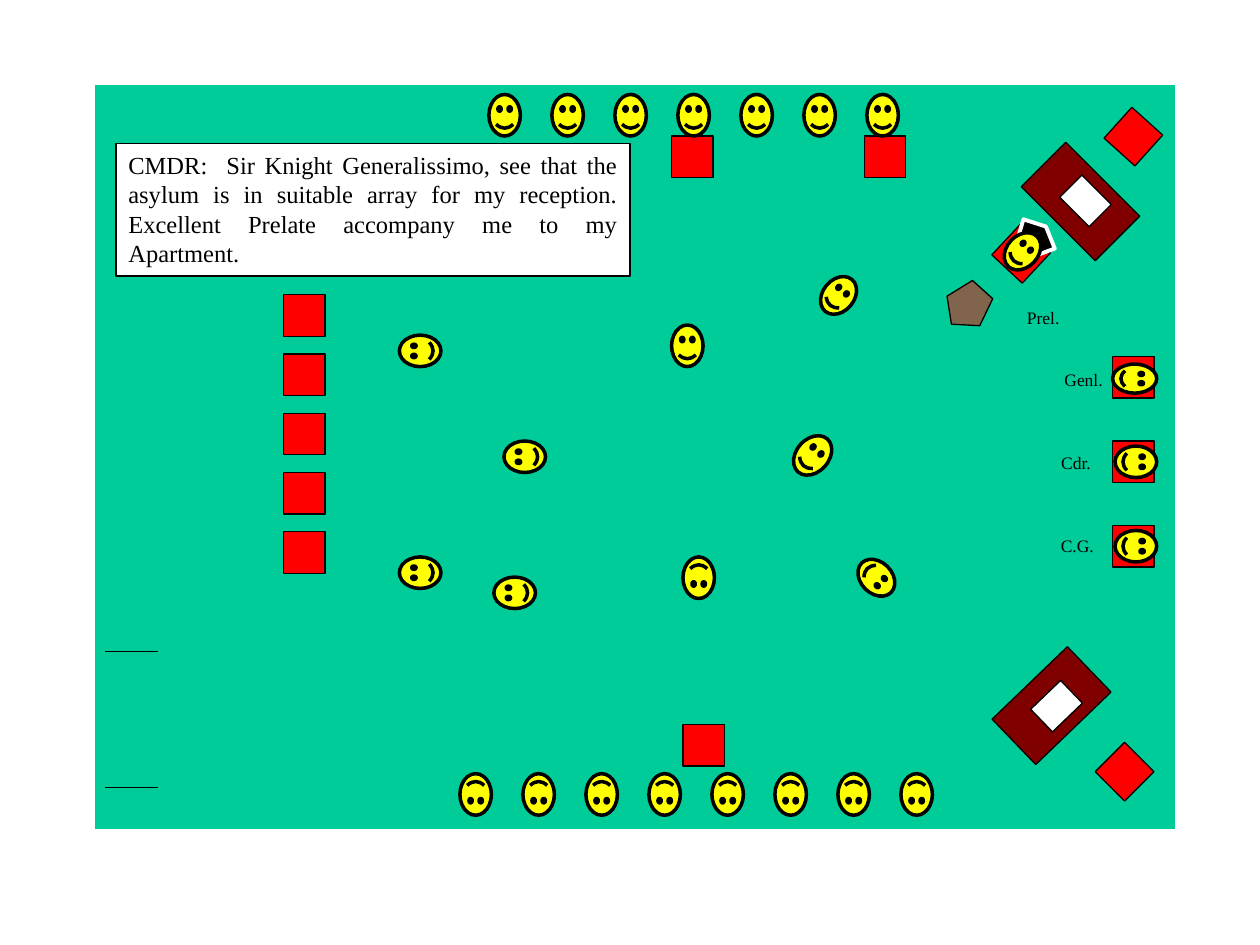
from dataclasses import dataclass

from lxml.etree import SubElement
from pptx import Presentation
from pptx.dml.color import RGBColor
from pptx.enum.shapes import MSO_CONNECTOR, MSO_SHAPE
from pptx.enum.text import MSO_ANCHOR, PP_ALIGN
from pptx.oxml.ns import qn
from pptx.util import Inches, Pt

GREEN = RGBColor(0x00, 0xCC, 0x99)
RED = RGBColor(0xFF, 0x00, 0x00)
MAROON = RGBColor(0x80, 0x00, 0x00)
YELLOW = RGBColor(0xFF, 0xFF, 0x00)
BLACK = RGBColor(0x00, 0x00, 0x00)
WHITE = RGBColor(0xFF, 0xFF, 0xFF)
FONT = "Times New Roman"
SEAT = 0.33


@dataclass
class Spot:
    x: float
    y: float
    rotation: float = 0
    w: float = 0.25
    h: float = 0.33


@dataclass
class Label:
    text: str
    x: float
    y: float


SEATS = [Spot(2.25, round(2.34 + 0.47 * i, 2)) for i in range(5)]
SEATS += [Spot(8.83, y) for y in (2.83, 3.5, 4.17)]
SEATS += [
    Spot(5.33, 1.08), Spot(6.86, 1.08), Spot(5.42, 5.75),
    Spot(8.83, 0.92, 42), Spot(8.76, 5.96, 45), Spot(7.94, 1.85, 43),
]
TABLES = [Spot(8.16, 1.35, 45, 0.83, 0.5), Spot(7.93, 5.35, 136.1, 0.83, 0.5)]
TABLE_TOPS = [Spot(8.45, 1.47, 45, 0.33, 0.25), Spot(8.22, 5.48, 136.1, 0.33, 0.25)]

KNIGHTS = [Spot(3.88 + 0.5 * i, 0.75) for i in range(7)]
KNIGHTS += [Spot(3.65 + 0.5 * i, 6.14, 180) for i in range(8)]
KNIGHTS += [
    Spot(6.53, 2.18, 40), Spot(6.83, 4.42, 135), Spot(6.32, 3.44, 41.7, 0.26, 0.35),
    Spot(5.33, 2.58), Spot(5.42, 4.42, 180),
    Spot(3.21, 2.62, 270), Spot(4.04, 3.46, 270), Spot(3.21, 4.38, 270), Spot(3.96, 4.54, 270),
    Spot(8.89, 2.83, 90, 0.23, 0.35), Spot(8.89, 3.5, 90), Spot(8.89, 4.17, 90),
]
LABELS = [
    Label("Prel.", 8.03, 2.31), Label("Genl.", 8.35, 2.8),
    Label("Cdr.", 8.29, 3.46), Label("C.G.", 8.3, 4.12),
]
SPEECH = (
    "CMDR:  Sir Knight Generalissimo, see that the asylum is in suitable array "
    "for my reception. Excellent Prelate accompany me to my Apartment."
)


def draw(shapes, kind: MSO_SHAPE, spot: Spot, fill: RGBColor,
         line: RGBColor = BLACK, width: float = 0.75):
    sp = shapes.add_shape(kind, Inches(spot.x), Inches(spot.y), Inches(spot.w), Inches(spot.h))
    sp.rotation = spot.rotation
    sp.shadow.inherit = False
    sp.fill.solid()
    sp.fill.fore_color.rgb = fill
    sp.line.color.rgb = line
    sp.line.width = Pt(width)
    return sp


def draw_knight(shapes, spot: Spot) -> None:
    draw(shapes, MSO_SHAPE.SMILEY_FACE, spot, YELLOW, width=2)


def draw_door_line(shapes, y: float) -> None:
    ln = shapes.add_connector(MSO_CONNECTOR.STRAIGHT, Inches(0.83), Inches(y), Inches(1.25), Inches(y))
    ln.line.color.rgb = BLACK
    ln.line.width = Pt(0.75)
    SubElement(ln._element.spPr, qn("a:effectLst"))


def write(tf, text: str, size: float, align: PP_ALIGN) -> None:
    tf.text = text
    p = tf.paragraphs[0]
    p.alignment = align
    font = p.runs[0].font
    font.name = FONT
    font.size = Pt(size)
    font.color.rgb = BLACK


def draw_label(shapes, label: Label) -> None:
    tf = shapes.add_textbox(Inches(label.x), Inches(label.y), Inches(0.5), Inches(0.42)).text_frame
    tf.word_wrap = False
    tf.vertical_anchor = MSO_ANCHOR.MIDDLE
    write(tf, label.text, 10, PP_ALIGN.CENTER)


def main() -> None:
    prs = Presentation()
    prs.slide_width, prs.slide_height = Inches(10), Inches(7.5)
    s = prs.slides.add_slide(prs.slide_layouts[6])
    shapes = s.shapes

    draw(shapes, MSO_SHAPE.RECTANGLE, Spot(0.75, 0.67, 0, 8.58, 5.92), GREEN, WHITE, 1)
    for spots, color in ((TABLES, MAROON), (TABLE_TOPS, WHITE), (SEATS, RED)):
        for spot in spots:
            if color == RED:
                spot.w = spot.h = SEAT
            draw(shapes, MSO_SHAPE.RECTANGLE, spot, color)
    for y in (5.17, 6.25):
        draw_door_line(shapes, y)

    stand = draw(shapes, MSO_SHAPE.REGULAR_PENTAGON, Spot(7.5, 2.25, 222, 0.35, 0.37), RED)
    tint = stand._element.spPr.find(qn("a:solidFill"))[0]
    SubElement(tint, qn("a:alpha")).set("val", "50000")

    for spot in KNIGHTS:
        draw_knight(shapes, spot)
    for label in LABELS:
        draw_label(shapes, label)

    speech = draw(shapes, MSO_SHAPE.RECTANGLE, Spot(0.92, 1.14, 0, 4.08, 1.05), WHITE)
    tf = speech.text_frame
    tf.word_wrap = True
    tf.vertical_anchor = MSO_ANCHOR.TOP
    write(tf, SPEECH, 14, PP_ALIGN.JUSTIFY)

    prelate = shapes.add_group_shape().shapes
    draw(prelate, MSO_SHAPE.REGULAR_PENTAGON, Spot(8.06, 1.77, 43, 0.34, 0.21), BLACK, WHITE, 2.25)
    draw_knight(prelate, Spot(7.99, 1.83, 43))

    prs.save("out.pptx")


if __name__ == "__main__":
    main()
